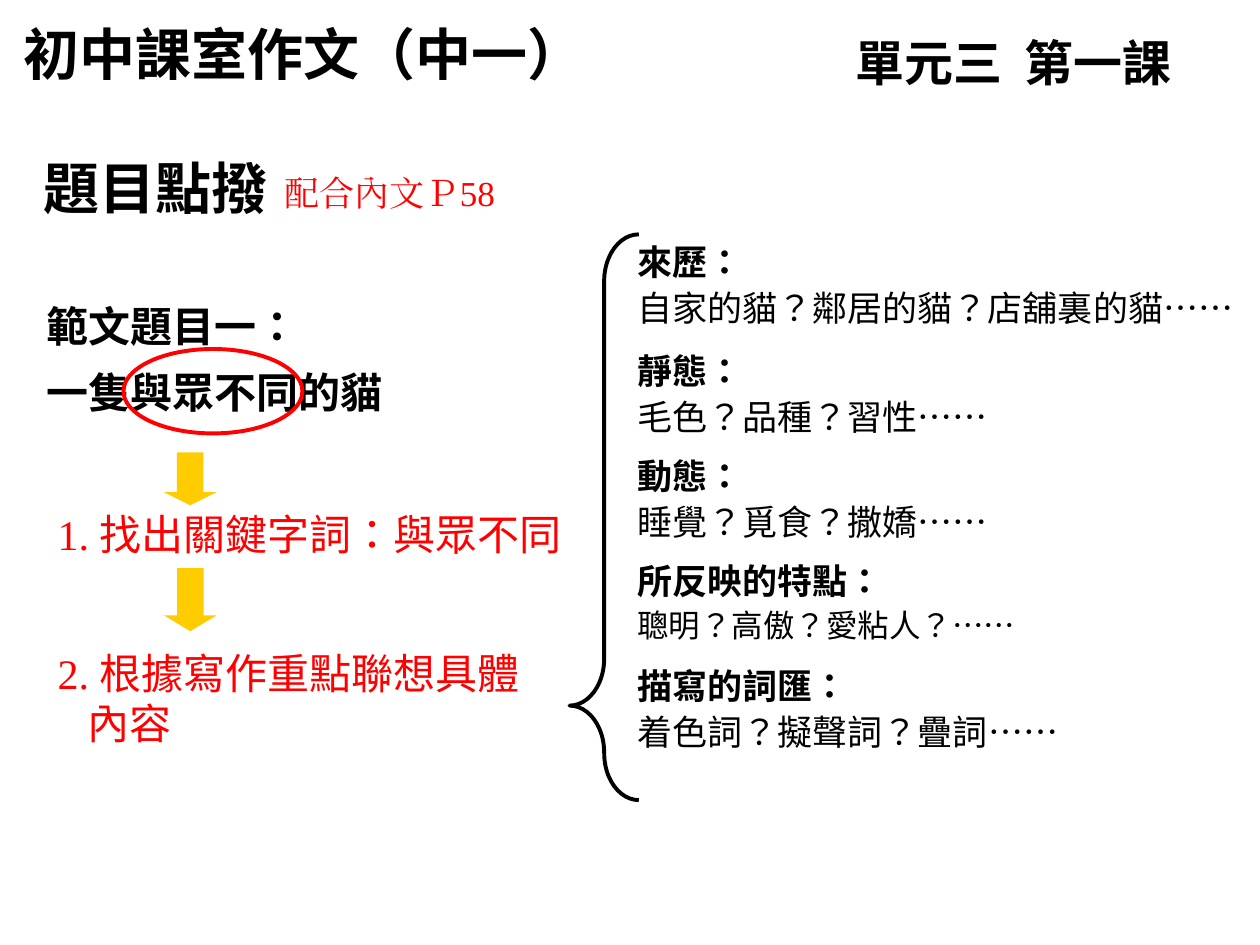
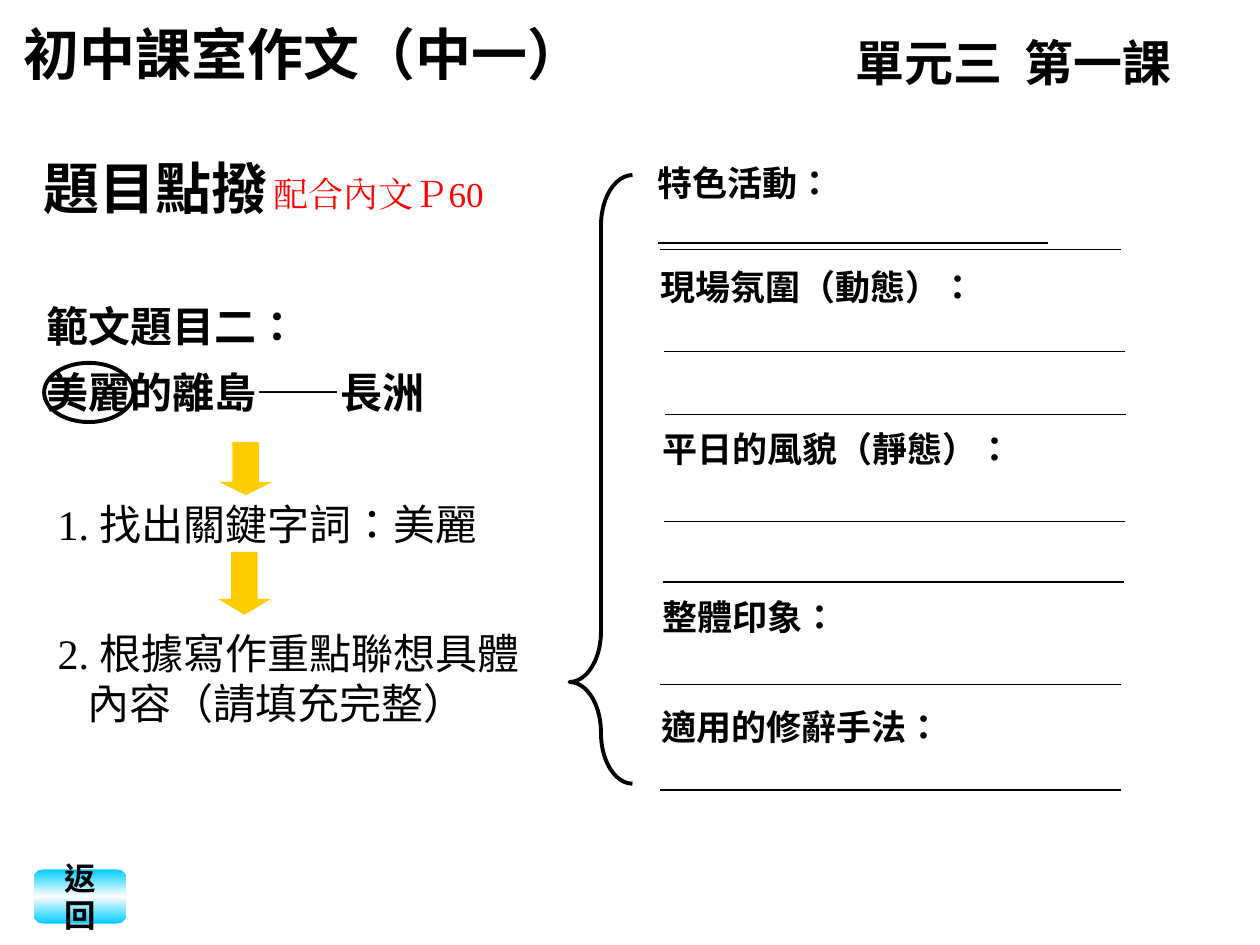
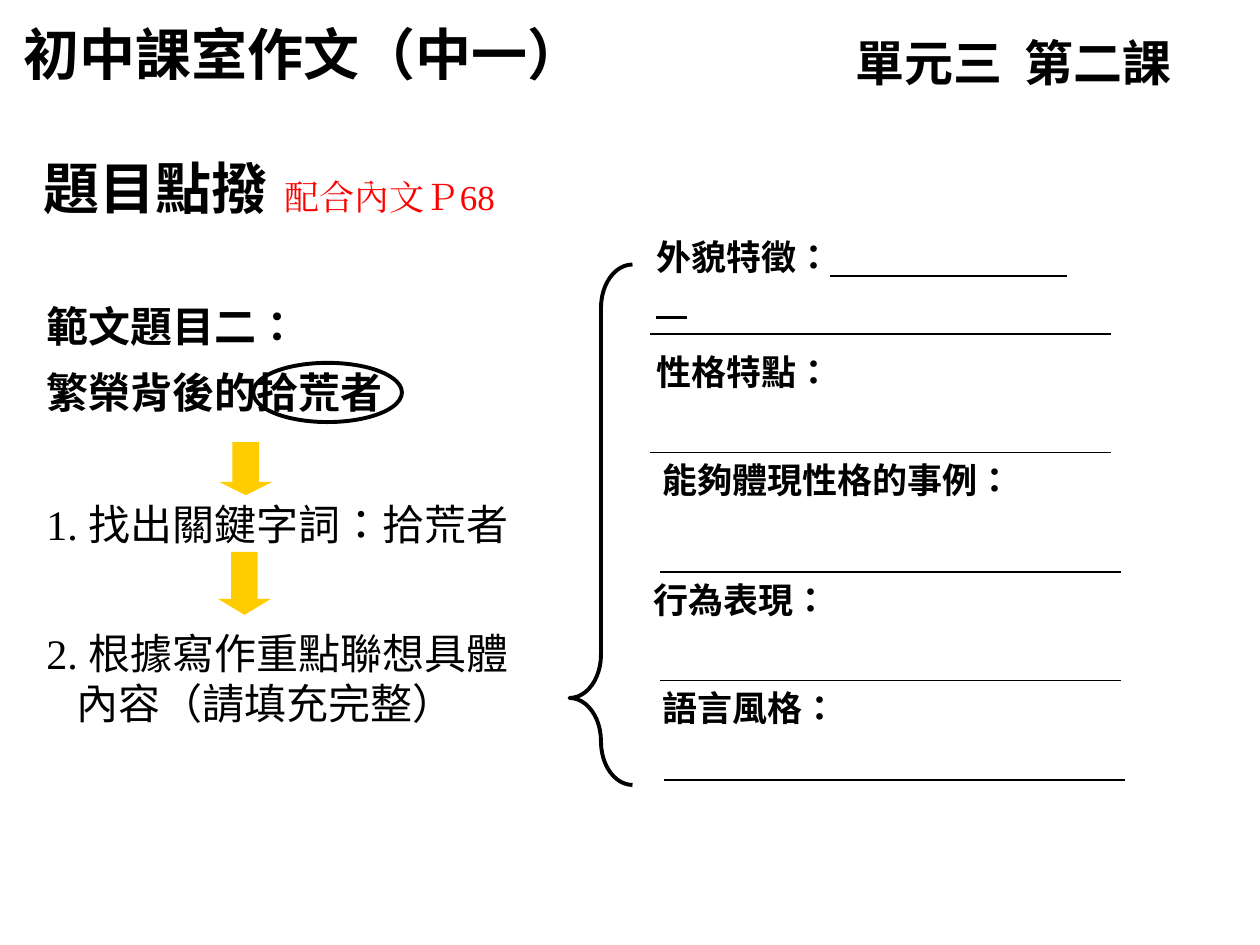
from dataclasses import dataclass
from typing import NamedTuple

from lxml.etree import SubElement
from pptx import Presentation
from pptx.dml.color import RGBColor
from pptx.enum.shapes import MSO_CONNECTOR as Connector, MSO_SHAPE as Preset
from pptx.enum.text import MSO_ANCHOR as Anchor, MSO_AUTO_SIZE as AutoSize, PP_ALIGN as Align
from pptx.oxml.ns import qn
from pptx.util import Emu, Inches, Pt

WIDTH, HEIGHT = Inches(10), Inches(7.5)
COLUMNS, ROWS = 100, 75


@dataclass(frozen=True)
class Theme:
    ink: str = "000000"
    accent: str = "FF0000"
    arrow: str = "FFCC00"
    button_edge: str = "00CCFF"
    button_middle: str = "FFFFFF"
    title_size: int = 32
    unit_size: int = 28
    topic_size: int = 24
    body_size: int = 20
    small_size: int = 18
    title_font: str = "Roboto"
    label_font: str = "Arial"
    body_font: str = "DejaVu Sans"
    number_font: str = "Times New Roman"
    dots_font: str = "Noto Sans CJK SC"
    thick: float = 2.25
    underline: float = 1.25
    thin: float = 0.75


THEME = Theme()


class Area(NamedTuple):
    """A frame in columns and rows of the slide grid."""
    left: float
    top: float
    width: float
    height: float


class Span(NamedTuple):
    text: str
    size: int = THEME.body_size
    font: str = THEME.body_font
    bold: bool = False
    color: str = THEME.ink


class Para(NamedTuple):
    spans: list[Span]
    before: float = 0
    line_spacing: float | None = None
    indent: float = 0
    tab: float = 0


class Rule(NamedTuple):
    left: float
    top: float
    length: float = 36.6
    weight: float = THEME.thin


class Label(NamedTuple):
    text: str
    left: float
    top: float
    width: float


class Trait(NamedTuple):
    heading: str
    questions: str
    before: float
    gap: float = 2
    size: int = THEME.body_size
    font: str = THEME.body_font


class Brace(NamedTuple):
    area: Area
    curve: float


@dataclass(frozen=True)
class Lesson:
    unit: str
    page_label: str
    page_left: float
    page_top: float
    topic: list[list[Span]]
    keyword: str
    keyword_ring: Area
    arrows: tuple[Area, Area]
    step_left: float
    step_tops: tuple[float, float]
    step_width: float
    step_ending: str
    brace: Brace
    highlight: str = THEME.ink
    traits: tuple[Trait, ...] = ()
    labels: tuple[Label, ...] = ()
    rules: tuple[Rule, ...] = ()
    has_return: bool = False


def across(columns: float) -> Emu:
    return Emu(round(WIDTH * columns / COLUMNS))


def down(rows: float) -> Emu:
    return Emu(round(HEIGHT * rows / ROWS))


def frame(area: Area) -> tuple[Emu, Emu, Emu, Emu]:
    return across(area.left), down(area.top), across(area.width), down(area.height)


def rgb(color: str) -> RGBColor:
    return RGBColor.from_string(color)


def format_run(run, span: Span) -> None:
    run.font.size = Pt(span.size)
    run.font.bold = span.bold
    run.font.name = span.font
    run.font.color.rgb = rgb(span.color)
    properties = run._r.get_or_add_rPr()
    properties.set("lang", "zh-TW")
    SubElement(properties, qn("a:ea")).set("typeface", span.font)


def fill_paragraph(paragraph, para: Para) -> None:
    paragraph.text = para.spans[0].text
    for span in para.spans[1:]:
        paragraph.add_run().text = span.text
    for run, span in zip(paragraph.runs, para.spans):
        format_run(run, span)
    paragraph.space_before = Pt(para.before)
    if para.line_spacing:
        paragraph.line_spacing = para.line_spacing
    properties = paragraph._p.get_or_add_pPr()
    if para.indent:
        properties.set("marL", str(across(para.indent)))
    if para.tab:
        tabs = SubElement(properties, qn("a:tabLst"))
        SubElement(tabs, qn("a:tab"), pos=str(across(para.tab)), algn="l")


def add_text(slide, area: Area, paras: list[Para]) -> None:
    text_frame = slide.shapes.add_textbox(*frame(area)).text_frame
    text_frame.word_wrap = True
    text_frame.auto_size = AutoSize.SHAPE_TO_FIT_TEXT
    for index, para in enumerate(paras):
        paragraph = text_frame.add_paragraph() if index else text_frame.paragraphs[0]
        fill_paragraph(paragraph, para)


def add_preset(slide, preset: Preset, area: Area, fill: str = "", line: str = "",
               adjustments: tuple[float, ...] = ()):
    shape = slide.shapes.add_shape(preset, *frame(area))
    shape.shadow.inherit = False
    for index, value in enumerate(adjustments):
        shape.adjustments[index] = value
    if fill:
        shape.fill.solid()
        shape.fill.fore_color.rgb = rgb(fill)
    else:
        shape.fill.background()
    if line:
        shape.line.color.rgb = rgb(line)
        shape.line.width = Pt(THEME.thick)
    else:
        shape.line.fill.background()
    return shape


def add_rule(slide, rule: Rule) -> None:
    y = down(rule.top)
    line = slide.shapes.add_connector(
        Connector.STRAIGHT, across(rule.left), y, across(rule.left + rule.length), y)
    line.line.color.rgb = rgb(THEME.ink)
    line.line.width = Pt(rule.weight)
    SubElement(line._element.spPr, qn("a:effectLst"))


def add_header(slide, lesson: Lesson) -> None:
    course = Span("初中課室作文（中一）", THEME.title_size, THEME.title_font, True)
    section = Span("題目點撥", THEME.title_size, THEME.label_font, True)
    unit = Span(lesson.unit, THEME.unit_size, THEME.title_font, True)
    page = Span(lesson.page_label, font=THEME.number_font, color=THEME.accent)
    add_text(slide, Area(0.9, 1.1, 52.2, 6.3), [Para([course])])
    add_text(slide, Area(2.5, 11.7, 30.8, 6.3), [Para([section])])
    add_text(slide, Area(lesson.page_left, lesson.page_top, 24.7, 4.3), [Para([page])])
    add_text(slide, Area(66.9, 2.1, 33.5, 5.7), [Para([unit], tab=13.4)])


def add_steps(slide, lesson: Lesson) -> None:
    def numbered(number: str, text: str) -> Para:
        return Para([Span(number, THEME.topic_size, THEME.number_font, color=lesson.highlight),
                     Span(text, THEME.topic_size, color=lesson.highlight)])

    ending = Span(lesson.step_ending, THEME.topic_size, color=lesson.highlight)
    first_top, second_top = lesson.step_tops
    add_text(slide, Area(lesson.step_left, first_top, lesson.step_width, 5),
             [numbered("1. ", "找出關鍵字詞：" + lesson.keyword)])
    add_text(slide, Area(lesson.step_left, second_top, 41.7, 9),
             [numbered("2. ", "根據寫作重點聯想具體"), Para([ending], indent=2.4)])
    upper, lower = lesson.arrows
    add_preset(slide, Preset.DOWN_ARROW, upper, THEME.arrow, adjustments=(0.5, 0.25))
    turned = add_preset(slide, Preset.RIGHT_ARROW, lower, THEME.arrow, adjustments=(0.5, 0.3))
    turned.rotation = 90


def add_traits(slide, traits: tuple[Trait, ...]) -> None:
    paras = []
    for trait in traits:
        paras += [
            Para([Span(trait.heading, bold=True)], trait.before),
            Para([Span(trait.questions, trait.size, trait.font),
                  Span("……", trait.size, THEME.dots_font)], trait.gap),
        ]
    add_text(slide, Area(49.6, 18.6, 49.8, 45.2), paras)


def add_return_button(slide) -> None:
    button = add_preset(slide, Preset.FLOWCHART_ALTERNATE_PROCESS, Area(2.7, 69, 7.3, 4.3))
    button.fill.gradient()
    button.fill.gradient_angle = 90
    stops = button.fill._fill._gradFill.gsLst
    for stop in list(stops):
        stops.remove(stop)
    colors = (THEME.button_edge, THEME.button_middle, THEME.button_edge)
    for index, color in enumerate(colors):
        stop = SubElement(stops, qn("a:gs"), pos=str(index * 50000))
        SubElement(stop, qn("a:srgbClr"), val=color)
    text_frame = button.text_frame
    text_frame.word_wrap = True
    text_frame.vertical_anchor = Anchor.MIDDLE
    paragraph = text_frame.paragraphs[0]
    fill_paragraph(paragraph, Para([Span("返回", THEME.small_size, THEME.label_font, True)]))
    paragraph.alignment = Align.CENTER


def add_lesson(deck, lesson: Lesson) -> None:
    slide = deck.slides.add_slide(deck.slide_layouts[6])
    add_header(slide, lesson)
    add_text(slide, Area(2.7, 22.2, 50, 11.4),
             [Para(spans, line_spacing=1.3) for spans in lesson.topic])
    add_preset(slide, Preset.OVAL, lesson.keyword_ring, line=lesson.highlight)
    add_steps(slide, lesson)
    add_preset(slide, Preset.LEFT_BRACE, lesson.brace.area, line=THEME.ink,
               adjustments=(lesson.brace.curve, 0.833))
    if lesson.traits:
        add_traits(slide, lesson.traits)
    for label in lesson.labels:
        add_text(slide, Area(label.left, label.top, label.width, 4.3),
                 [Para([Span(label.text, bold=True)])])
    for rule in lesson.rules:
        add_rule(slide, rule)
    if lesson.has_return:
        add_return_button(slide)


def topic_span(text: str, font: str = THEME.body_font) -> Span:
    return Span(text, THEME.topic_size, font, True)


EXERCISE_ARROWS = (Area(17.4, 35.1, 4.2, 4.2), Area(16.9, 44.2, 5, 4.2))
EXERCISE_STEPS = (39.1, 49.3)
EXERCISE_ENDING = "內容（請填充完整）"

LESSONS = (
    Lesson(
        unit="單元三\t第一課", page_label="配合內文Ｐ58", page_left=21.6, page_top=13.1,
        topic=[[topic_span("範文題目一：")], [topic_span("一隻與眾不同的貓")]],
        keyword="與眾不同", keyword_ring=Area(9.8, 27.7, 14.2, 6.7),
        arrows=(Area(13, 35.9, 4.2, 4.2), Area(12.6, 45.5, 5, 4.2)),
        step_left=3.6, step_tops=(39.9, 50.9), step_width=42.5, step_ending="內容",
        brace=Brace(Area(45.2, 18.6, 5.5, 44.9), 0.676), highlight=THEME.accent,
        traits=(
            Trait("來歷：", "自家的貓？鄰居的貓？店舖裏的貓", 0, 2.4),
            Trait("靜態：", "毛色？品種？習性", 12),
            Trait("動態：", "睡覺？覓食？撒嬌", 10),
            Trait("所反映的特點：", "聰明？高傲？愛粘人？", 10, 2.4,
                  THEME.small_size, THEME.label_font),
            Trait("描寫的詞匯：", "着色詞？擬聲詞？疊詞", 12),
        ),
    ),
    Lesson(
        unit="單元三\t第一課", page_label="配合內文Ｐ60", page_left=20.7, page_top=13.2,
        topic=[[topic_span("範文題目二：")],
               [topic_span("美麗的離島"), topic_span("——", THEME.dots_font),
                topic_span("長洲")]],
        keyword="美麗", keyword_ring=Area(3.5, 28.8, 7.1, 4.7),
        arrows=EXERCISE_ARROWS, step_left=3.6, step_tops=EXERCISE_STEPS, step_width=40.8,
        step_ending=EXERCISE_ENDING, brace=Brace(Area(45.2, 13.9, 5, 48.3), 0.806),
        labels=(
            Label("特色活動：", 51.2, 12.3, 35),
            Label("現場氛圍（動態）：", 51.4, 20.6, 35.8),
            Label("平日的風貌（靜態）：", 51.6, 33.4, 35.3),
            Label("整體印象：", 51.6, 46.8, 38.3),
            Label("適用的修辭手法：", 51.5, 55.5, 38.3),
        ),
        rules=(
            Rule(52.2, 19.3, 31, THEME.underline),
            Rule(52.4, 19.8), Rule(52.7, 27.9), Rule(52.8, 32.9), Rule(52.7, 41.4),
            Rule(52.6, 46.2), Rule(52.4, 54.3), Rule(52.4, 62.7),
        ),
        has_return=True,
    ),
    Lesson(
        unit="單元三\t第二課", page_label="配合內文Ｐ68", page_left=21.6, page_top=13.4,
        topic=[[topic_span("範文題目二：")], [topic_span("繁榮背後的拾荒者")]],
        keyword="拾荒者", keyword_ring=Area(20.1, 28.8, 11.8, 4.7),
        arrows=EXERCISE_ARROWS, step_left=2.7, step_tops=EXERCISE_STEPS, step_width=48.8,
        step_ending=EXERCISE_ENDING, brace=Brace(Area(45.2, 21, 5, 41.3), 0.688),
        labels=(
            Label("外貌特徵：", 51.1, 18.2, 35),
            Label("性格特點：", 51.1, 27.3, 35.8),
            Label("能夠體現性格的事例：", 51.6, 35.9, 38.3),
            Label("行為表現：", 50.9, 45.4, 21.7),
            Label("語言風格：", 51.6, 54, 21.7),
        ),
        rules=(
            Rule(65.9, 21.9, 18.8, THEME.underline), Rule(52.1, 25.2, 2.4, THEME.underline),
            Rule(51.6, 26.5), Rule(51.6, 35.9), Rule(52.4, 45.4), Rule(52.4, 54),
            Rule(52.7, 61.9),
        ),
    ),
)


def main() -> None:
    deck = Presentation()
    deck.slide_width, deck.slide_height = WIDTH, HEIGHT
    for lesson in LESSONS:
        add_lesson(deck, lesson)
    deck.save("out.pptx")


if __name__ == "__main__":
    main()
